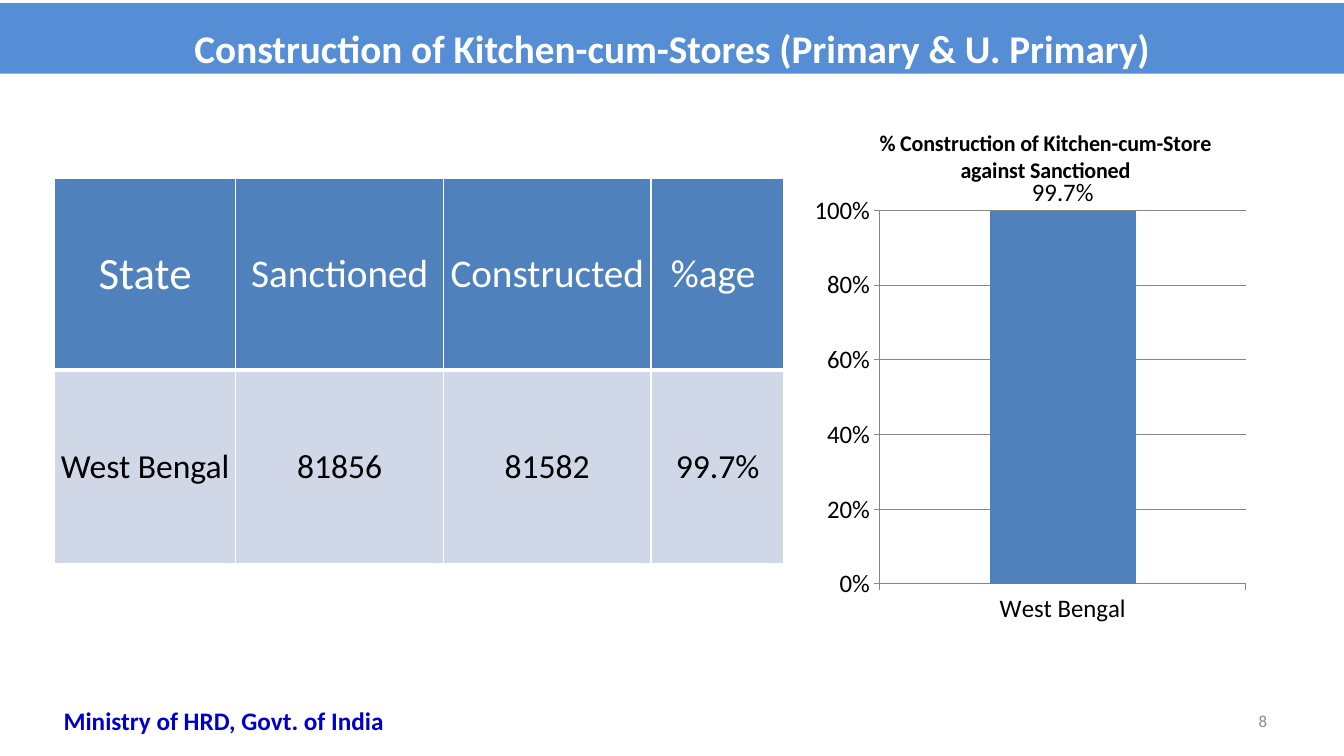
"""Build the kitchen-cum-stores construction slide with a table and a column chart."""
import pptx
import pptx.chart.data
import pptx.dml.color
import pptx.enum.chart
import pptx.enum.text
import pptx.oxml
import pptx.oxml.ns
import pptx.util

Pt = pptx.util.Pt
RGBColor = pptx.dml.color.RGBColor
Align = pptx.enum.text.PP_ALIGN
Anchor = pptx.enum.text.MSO_ANCHOR

TITLE = "Construction of Kitchen-cum-Stores (Primary & U. Primary)"
CHART_TITLE = "% Construction of Kitchen-cum-Store against Sanctioned"
STATE, SHARE = "West Bengal", 0.997
ROWS = [["State", "Sanctioned", "Constructed", "%age "],
        [STATE, "81856", "81582", "99.7%"]]
MINISTRY = "Ministry of HRD, Govt. of India"
PAGE_NUMBER = "8"

WHITE = RGBColor(0xFF, 0xFF, 0xFF)
BLACK = RGBColor(0, 0, 0)
BANNER = RGBColor(0x55, 0x8E, 0xD5)
BLUE = RGBColor(0x4F, 0x81, 0xBD)
PALE = RGBColor(0xD0, 0xD8, 0xE8)
GRID = RGBColor(0x87, 0x87, 0x87)
GREY = RGBColor(0x8C, 0x8C, 0x8C)
NAVY = RGBColor(0, 0, 0xCC)

BANNER_BOX = (0, 2.16, 960, 50.4)
TABLE_BOX = (38.9, 127.4, 520.6, 275)
CHART_BOX = (581.8, 77, 324.7, 383.8)
MINISTRY_BOX = (18.7, 500.4, 282.2, 28.8)
NUMBER_BOX = (688.3, 500.4, 223.9, 28.8)
COLUMN_WIDTHS = [129.6, 148.3, 148.3, 95]
ROW_HEIGHTS = [136.8, 138.2]
PLOT_LAYOUT = {"x": 0.129, "y": 0.191, "w": 0.819, "h": 0.695}


def points(box):
    return [Pt(value) for value in box]


def apply(target, **values):
    for name, value in values.items():
        setattr(target, name, value)


def style_font(font, size, color, bold=False):
    apply(font, name="Calibri", size=Pt(size), bold=bold)
    font.color.rgb = color


def write(frame, text, size, color, bold=False, align=Align.CENTER):
    para = frame.paragraphs[0]
    para.alignment = align
    span = para.add_run()
    span.text = text
    style_font(span.font, size, color, bold)
    return para


def add_title(page):
    title = page.shapes.title
    apply(title, **dict(zip(("left", "top", "width", "height"), points(BANNER_BOX))))
    title.fill.solid()
    title.fill.fore_color.rgb = BANNER
    apply(title.text_frame, word_wrap=True, vertical_anchor=Anchor.MIDDLE,
          auto_size=pptx.enum.text.MSO_AUTO_SIZE.NONE)
    write(title.text_frame, TITLE, 28, WHITE, True).line_spacing = 1.4


def add_text(page, box, anchor, *content):
    frame = page.shapes.add_textbox(*points(box)).text_frame
    apply(frame, word_wrap=True, vertical_anchor=anchor)
    write(frame, *content)


def border_cell(cell, widths):
    properties = cell._tc.get_or_add_tcPr()
    for index, (side, width) in enumerate(widths.items()):
        properties.insert(index, pptx.oxml.parse_xml(
            f'<a:{side} {pptx.oxml.ns.nsdecls("a")} w="{Pt(width)}"><a:solidFill>'
            f'<a:srgbClr val="{WHITE}"/></a:solidFill></a:{side}>'))


def add_stores_table(page):
    table = page.shapes.add_table(len(ROWS), len(ROWS[0]), *points(TABLE_BOX)).table
    table.horz_banding = False
    for column, width in zip(table.columns, COLUMN_WIDTHS):
        column.width = Pt(width)
    for r, (row, height) in enumerate(zip(table.rows, ROW_HEIGHTS)):
        row.height = Pt(height)
        header = r == 0
        for c, cell in enumerate(row.cells):
            apply(cell, vertical_anchor=Anchor.MIDDLE, margin_left=Pt(0.5),
                  margin_right=Pt(0.5), margin_top=Pt(0.5), margin_bottom=0)
            cell.fill.solid()
            cell.fill.fore_color.rgb = BLUE if header else PALE
            size = (32 if c == 0 else 28) if header else 24
            write(cell.text_frame, ROWS[r][c], size, WHITE if header else BLACK)
            border_cell(cell, {"lnL": 1, "lnR": 1, "lnT": 1 if header else 3,
                               "lnB": 3 if header else 1})


def add_share_chart(page):
    data = pptx.chart.data.CategoryChartData(number_format="0.0%")
    data.categories = [STATE]
    data.add_series(CHART_TITLE, [SHARE])
    chart = page.shapes.add_chart(pptx.enum.chart.XL_CHART_TYPE.COLUMN_CLUSTERED,
                                  *points(CHART_BOX), data).chart
    style_font(chart.font, 18, BLACK)
    apply(chart, has_legend=False, has_title=True)
    write(chart.chart_title.text_frame, CHART_TITLE, 16, BLACK, True)

    plot = chart.plots[0]
    apply(plot, gap_width=150, vary_by_categories=False, has_data_labels=True)
    apply(plot.data_labels, show_value=True, number_format="0.0%",
          number_format_is_linked=False,
          position=pptx.enum.chart.XL_LABEL_POSITION.OUTSIDE_END)
    style_font(plot.data_labels.font, 18, BLACK)
    fill = plot.series[0].format.fill
    fill.solid()
    fill.fore_color.rgb = BLUE

    apply(chart.value_axis, minimum_scale=0, maximum_scale=1, major_unit=0.2,
          has_major_gridlines=True)
    apply(chart.value_axis.tick_labels, number_format="0%", number_format_is_linked=False)
    chart.value_axis.major_gridlines.format.line.color.rgb = GRID
    for axis in (chart.value_axis, chart.category_axis):
        axis.major_tick_mark = pptx.enum.chart.XL_TICK_MARK.OUTSIDE
        axis.format.line.color.rgb = GRID
        style_font(axis.tick_labels.font, 18, BLACK)

    area = chart._chartSpace.chart.plotArea
    for layout in area.findall(pptx.oxml.ns.qn("c:layout")):
        area.remove(layout)
    modes = "".join(f'<c:{key}Mode val="edge"/>' for key in "xy")
    places = "".join(f'<c:{key} val="{value}"/>' for key, value in PLOT_LAYOUT.items())
    area.insert(0, pptx.oxml.parse_xml(
        f'<c:layout {pptx.oxml.ns.nsdecls("c")}><c:manualLayout>'
        f'<c:layoutTarget val="inner"/>{modes}{places}</c:manualLayout></c:layout>'))


def main():
    deck = pptx.Presentation()
    apply(deck, slide_width=Pt(960), slide_height=Pt(540))
    page = deck.slides.add_slide(deck.slide_layouts[5])
    add_title(page)
    add_share_chart(page)
    add_text(page, NUMBER_BOX, Anchor.MIDDLE, PAGE_NUMBER, 12, GREY, False, Align.RIGHT)
    add_stores_table(page)
    add_text(page, MINISTRY_BOX, Anchor.TOP, MINISTRY, 18, NAVY, True)
    deck.save("out.pptx")


if __name__ == "__main__":
    main()
